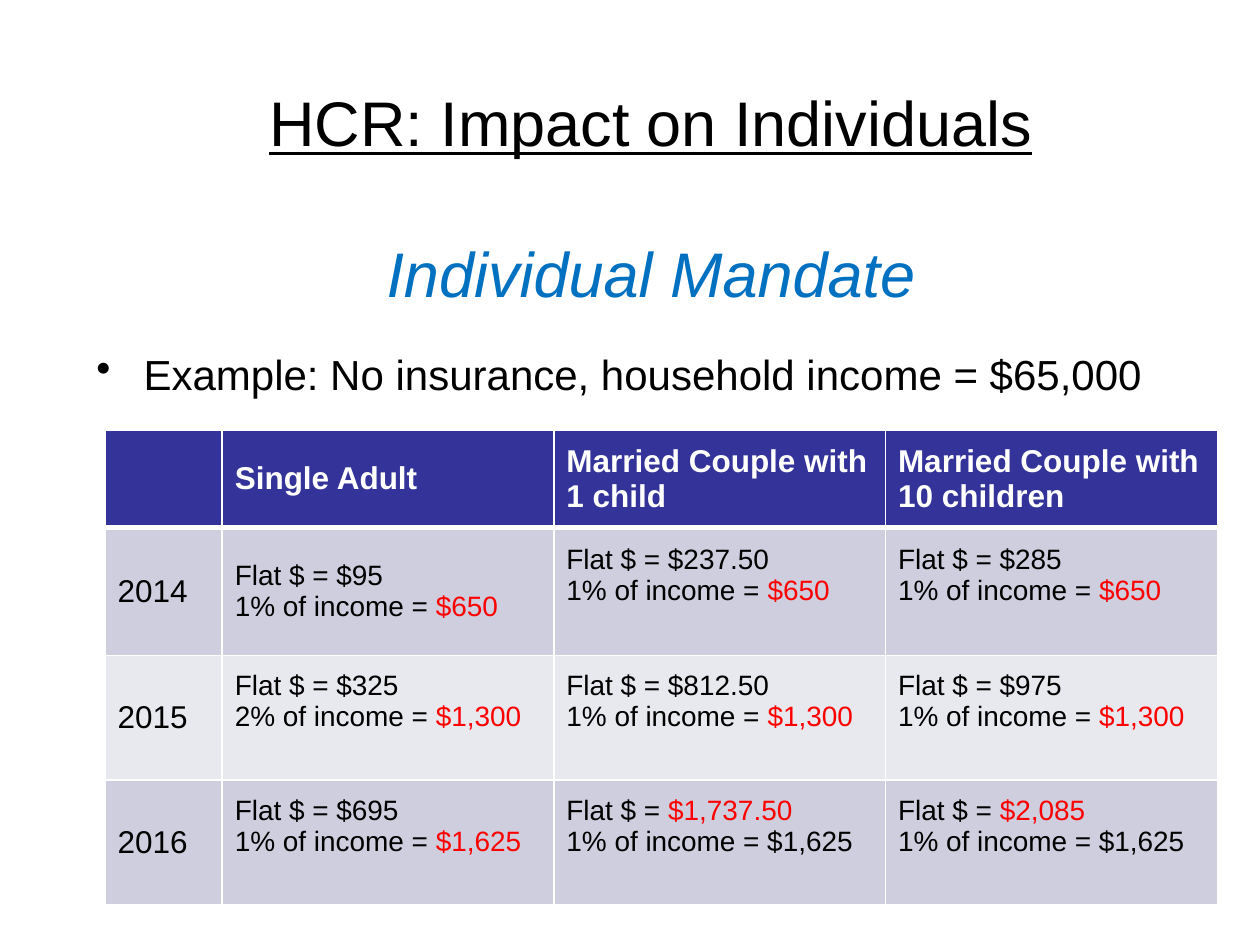
from lxml import etree
from pptx import Presentation
from pptx import util as u
from pptx.dml.color import RGBColor
from pptx.enum import text
from pptx.oxml.ns import qn

Pt = u.Pt
BLACK = RGBColor(0x00, 0x00, 0x00)
WHITE = RGBColor(0xFF, 0xFF, 0xFF)
RED = RGBColor(0xFF, 0x00, 0x00)
BLUE = RGBColor(0x00, 0x70, 0xC0)
HEADER_FILL = RGBColor(0x33, 0x33, 0x99)
BAND_FILLS = [RGBColor(0xCE, 0xCE, 0xDE), RGBColor(0xE8, 0xE8, 0xEF)]

COLUMN_WIDTHS = [67, 189.5, 189.5, 190]
ROW_HEIGHTS = [55.5, 73, 71.25, 71.25]
HEADERS = ["", "Single Adult", "Married Couple with 1 child",
           "Married Couple with 10 children"]
# Year, then (flat amount, percent, percent amount) for each household
PENALTIES = [
    ("2014", ("95", 1, "650"), ("237.50", 1, "650"), ("285", 1, "650")),
    ("2015", ("325", 2, "1,300"), ("812.50", 1, "1,300"), ("975", 1, "1,300")),
    ("2016", ("695", 1, "1,625"), ("1,737.50", 1, "1,625"), ("2,085", 1, "1,625")),
]


def style(font, size, color, bold=False):
    font.name = "Arial"
    font.size = Pt(size)
    font.color.rgb = color
    font.bold = bold


def add_box(page, left, top, width, height, margin_top):
    box = page.shapes.add_textbox(Pt(left), Pt(top), Pt(width), Pt(height))
    frame = box.text_frame
    frame.word_wrap = True
    frame.margin_top = Pt(margin_top)
    return frame


def add_bullet(para, indent):
    props = para._p.get_or_add_pPr()
    props.set("marL", str(Pt(indent)))
    props.set("indent", str(-Pt(indent)))
    etree.SubElement(props, qn("a:buChar")).set("char", "•")


def set_borders(cell, top=1, bottom=1):
    props = cell._tc.get_or_add_tcPr()
    sides = {"a:lnL": 1, "a:lnR": 1, "a:lnT": top, "a:lnB": bottom}
    for index, (tag, width) in enumerate(sides.items()):
        line = etree.Element(qn(tag), w=str(Pt(width)))
        fill = etree.SubElement(line, qn("a:solidFill"))
        etree.SubElement(fill, qn("a:srgbClr"), val=str(WHITE))
        props.insert(index, line)


def fill_cell(cell, color, **borders):
    cell.vertical_anchor = text.MSO_ANCHOR.MIDDLE
    cell.fill.solid()
    cell.fill.fore_color.rgb = color
    set_borders(cell, **borders)


def write_label(cell, words, color, bold=False):
    para = cell.text_frame.paragraphs[0]
    para.text = words
    style(para.font, 18, color, bold)


def write_penalty(cell, flat, percent, share):
    """Two lines; the larger amount, which is the one owed, is red."""
    amounts = [float(value.replace(",", "")) for value in (flat, share)]
    lines = [("Flat $ = ", flat), (f"{percent}% of income = ", share)]
    frame = cell.text_frame
    for index, (label, value) in enumerate(lines):
        para = frame.add_paragraph() if index else frame.paragraphs[0]
        style(para.font, 16, BLACK)
        if amounts[index] == max(amounts):
            para.add_run().text = label
            span = para.add_run()
            span.text = f"${value}"
            span.font.color.rgb = RED
        else:
            para.add_run().text = f"{label}${value}"


def add_penalty_table(page):
    frame = page.shapes.add_table(len(ROW_HEIGHTS), len(COLUMN_WIDTHS), Pt(60), Pt(246),
                                  Pt(sum(COLUMN_WIDTHS)), Pt(sum(ROW_HEIGHTS)))
    table = frame.table
    for column, width in zip(table.columns, COLUMN_WIDTHS):
        column.width = Pt(width)
    for row, height in zip(table.rows, ROW_HEIGHTS):
        row.height = Pt(height)

    # Header row
    for index, words in enumerate(HEADERS):
        cell = table.cell(0, index)
        fill_cell(cell, HEADER_FILL, bottom=3)
        if words:
            write_label(cell, words, WHITE, bold=True)

    # One banded row per year
    for row, (year, *penalties) in enumerate(PENALTIES, start=1):
        for cell in table.rows[row].cells:
            fill_cell(cell, BAND_FILLS[(row - 1) % 2], top=3 if row == 1 else 1)
        write_label(table.cell(row, 0), year, BLACK)
        for column, penalty in enumerate(penalties, start=1):
            cell = table.cell(row, column)
            write_penalty(cell, *penalty)
            # All but the first household's first year sit above the middle
            if (row, column) != (1, 1):
                cell.margin_bottom = Pt(22)


def main():
    deck = Presentation()
    deck.slide_width, deck.slide_height = Pt(720), Pt(540)
    page = deck.slides.add_slide(deck.slide_layouts[6])

    # Title
    frame = add_box(page, 48, 21.6, 648, 90, margin_top=9)
    frame.vertical_anchor = text.MSO_ANCHOR.MIDDLE
    para = frame.paragraphs[0]
    para.text = "HCR: Impact on Individuals"
    para.alignment = text.PP_ALIGN.CENTER
    style(para.font, 36, BLACK)
    para.font.underline = True

    # Subtitle and example
    frame = add_box(page, 48, 126, 648, 396, margin_top=8)
    para = frame.paragraphs[0]
    para.text = "Individual Mandate"
    para.alignment = text.PP_ALIGN.CENTER
    style(para.font, 36, BLUE)
    para.font.italic = True
    para = frame.add_paragraph()
    para.text = "Example: No insurance, household income = $65,000"
    para.space_before = Pt(22)
    add_bullet(para, 27)
    style(para.font, 24, BLACK)

    add_penalty_table(page)
    deck.save("out.pptx")


if __name__ == "__main__":
    main()
